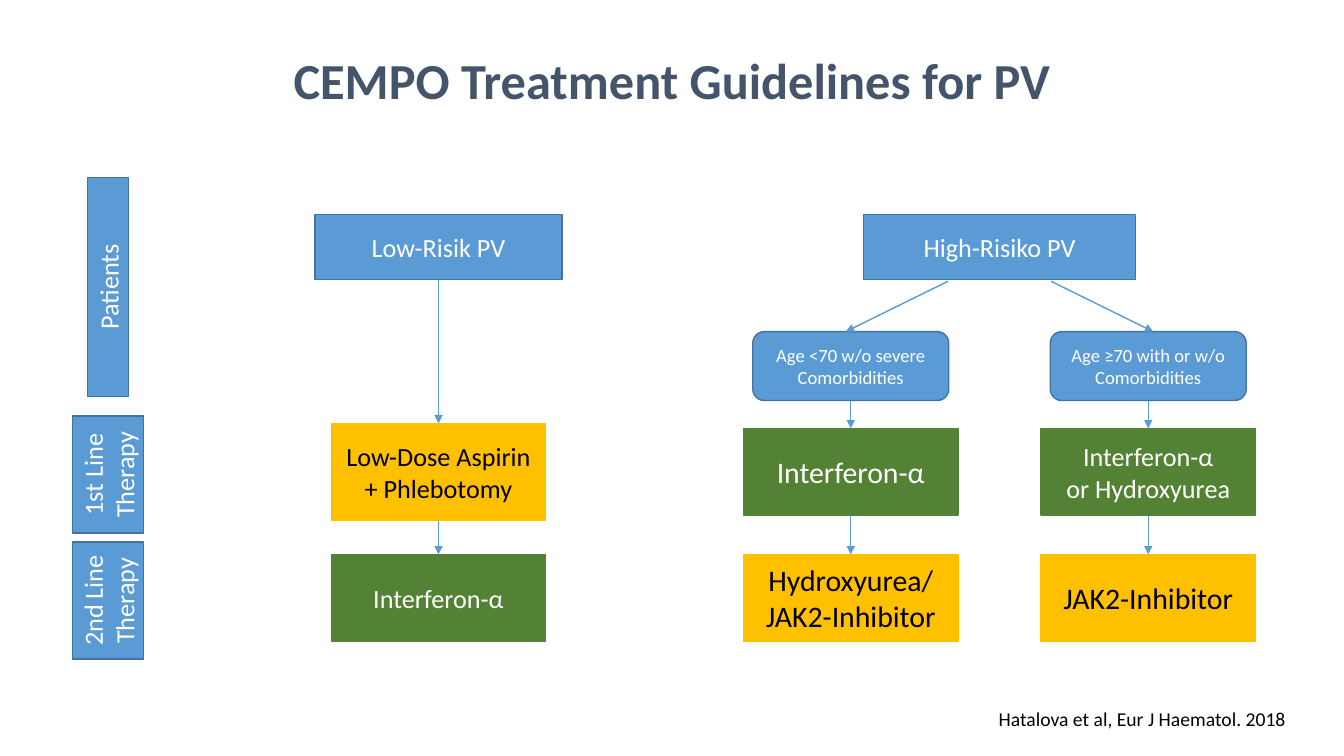
from lxml.etree import SubElement
from pptx import Presentation
from pptx.dml.color import RGBColor
from pptx.enum.shapes import MSO_CONNECTOR, MSO_SHAPE
from pptx.enum.text import MSO_ANCHOR, MSO_AUTO_SIZE, PP_ALIGN
from pptx.oxml.ns import qn
from pptx.util import Pt

BLUE = RGBColor(0x5B, 0x9B, 0xD5)
BLUE_EDGE = RGBColor(0x43, 0x73, 0x9E)
GREEN = RGBColor(0x54, 0x82, 0x35)
AMBER = RGBColor(0xFF, 0xC0, 0x00)
SLATE = RGBColor(0x44, 0x54, 0x6A)
WHITE = RGBColor(0xFF, 0xFF, 0xFF)
BLACK = RGBColor(0x00, 0x00, 0x00)

LOW, YOUNGER, OLDER = 313.2, 607.7, 820.2
HIGH = (YOUNGER + OLDER) / 2
LABEL = 77.2
RISK_TOP, AGE_TOP, FIRST_TOP, SECOND_TOP = 153.4, 236.9, 306, 396
ASPIRIN_TOP = 302.4
RISK_HEIGHT, AGE_HEIGHT, THERAPY_HEIGHT, ASPIRIN_HEIGHT = 46.4, 49.2, 62, 69.4
AGE_WIDTH, THERAPY_WIDTH = 140, 153
SMALL, MEDIUM, LARGE = 13.3, 18.7, 21.3

INSETS = {"margin_left": Pt(9.6), "margin_right": Pt(9.6),
          "margin_top": Pt(4.8), "margin_bottom": Pt(4.8)}
STYLES = {"blue": (BLUE, BLUE_EDGE, WHITE),
          "green": (GREEN, GREEN, WHITE),
          "amber": (AMBER, AMBER, BLACK)}


def write(frame, text, align, font_format, color):
    frame.text = text
    for para in frame.paragraphs:
        para.alignment = align
        for span in para.runs:
            for name, value in font_format.items():
                setattr(span.font, name, value)
            span.font.color.rgb = color


def add_node(page, text, center, top, width, height, style, size, preset=MSO_SHAPE.RECTANGLE):
    box = page.shapes.add_shape(preset, Pt(center - width / 2), Pt(top), Pt(width), Pt(height))
    fill, edge, color = STYLES[style]
    box.shadow.inherit = False
    box.fill.solid()
    box.fill.fore_color.rgb = fill
    box.line.color.rgb = edge
    box.line.width = Pt(1)
    frame = box.text_frame
    for name, value in {**INSETS, "word_wrap": True, "vertical_anchor": MSO_ANCHOR.MIDDLE}.items():
        setattr(frame, name, value)
    write(frame, text, PP_ALIGN.CENTER, {"name": "Calibri", "size": Pt(size)}, color)
    return box


deck = Presentation()
deck.slide_width, deck.slide_height = Pt(960), Pt(540)
page = deck.slides.add_slide(deck.slide_layouts[5])

title = page.shapes.title
for name, value in {"left": 0, "top": 0, "width": Pt(960), "height": Pt(118.8)}.items():
    setattr(title, name, value)
title.text_frame.vertical_anchor = MSO_ANCHOR.MIDDLE
title.text_frame.auto_size = MSO_AUTO_SIZE.NONE
write(title.text_frame, "CEMPO Treatment Guidelines for PV", PP_ALIGN.CENTER,
      {"name": "Calibri", "size": Pt(36), "bold": True}, SLATE)
title.text_frame.paragraphs[0].line_spacing = 0.9

stages = [
    ("Patients", 126.7, 29.5, 156.6),
    ("1st Line Therapy", 297.2, 50.6, 83.6),
    ("2nd Line Therapy", 387.2, 50.6, 83.6),
]
for text, top, width, height in stages:
    box = add_node(page, text, LABEL, top, width, height, "blue", MEDIUM)
    box.text_frame._txBody.bodyPr.set("vert", "vert270")

risks = [("Low-Risik PV", LOW, 176.4), ("High-Risiko PV", HIGH, 194.4)]
for text, center, width in risks:
    add_node(page, text, center, RISK_TOP, width, RISK_HEIGHT, "blue", MEDIUM)

ages = [("Age <70 w/o severe Comorbidities", YOUNGER), ("Age ≥70 with or w/o Comorbidities", OLDER)]
for text, center in ages:
    add_node(page, text, center, AGE_TOP, AGE_WIDTH, AGE_HEIGHT, "blue", SMALL,
             MSO_SHAPE.ROUNDED_RECTANGLE)

therapies = [
    ("Low-Dose Aspirin\n+ Phlebotomy", LOW, ASPIRIN_TOP, ASPIRIN_HEIGHT, "amber", MEDIUM),
    ("Interferon-α", LOW, SECOND_TOP, THERAPY_HEIGHT, "green", MEDIUM),
    ("Interferon-α", YOUNGER, FIRST_TOP, THERAPY_HEIGHT, "green", LARGE),
    ("Interferon-α\nor Hydroxyurea", OLDER, FIRST_TOP, THERAPY_HEIGHT, "green", MEDIUM),
    ("Hydroxyurea/\nJAK2-Inhibitor", YOUNGER, SECOND_TOP, THERAPY_HEIGHT, "amber", LARGE),
    ("JAK2-Inhibitor", OLDER, SECOND_TOP, THERAPY_HEIGHT, "amber", LARGE),
]
for text, center, top, height, style, size in therapies:
    add_node(page, text, center, top, THERAPY_WIDTH, height, style, size)

arrows = [
    (LOW, RISK_TOP + RISK_HEIGHT, LOW, ASPIRIN_TOP),
    (LOW, ASPIRIN_TOP + ASPIRIN_HEIGHT, LOW, SECOND_TOP),
]
for center in (YOUNGER, OLDER):
    arrows.append((center, AGE_TOP + AGE_HEIGHT, center, FIRST_TOP))
    arrows.append((center, FIRST_TOP + THERAPY_HEIGHT, center, SECOND_TOP))
for side in (-1, 1):
    arrows.append((HIGH + side * 36.8, 200.9, HIGH + side * 109.8, AGE_TOP))
for start_x, start_y, end_x, end_y in arrows:
    arrow = page.shapes.add_connector(MSO_CONNECTOR.STRAIGHT, Pt(start_x), Pt(start_y),
                                      Pt(end_x), Pt(end_y))
    arrow.line.color.rgb = BLUE
    arrow.line.width = Pt(1)
    SubElement(arrow.line._get_or_add_ln(), qn("a:tailEnd"), type="triangle")
    SubElement(arrow._element.spPr, qn("a:effectLst"))

citation = page.shapes.add_textbox(Pt(695.5), Pt(500.4), Pt(232.6), Pt(26.6))
for name, value in {**INSETS, "word_wrap": False, "auto_size": MSO_AUTO_SIZE.SHAPE_TO_FIT_TEXT}.items():
    setattr(citation.text_frame, name, value)
write(citation.text_frame, "Hatalova et al, Eur J Haematol. 2018", PP_ALIGN.RIGHT,
      {"name": "Calibri", "size": Pt(14)}, BLACK)

deck.save("out.pptx")
